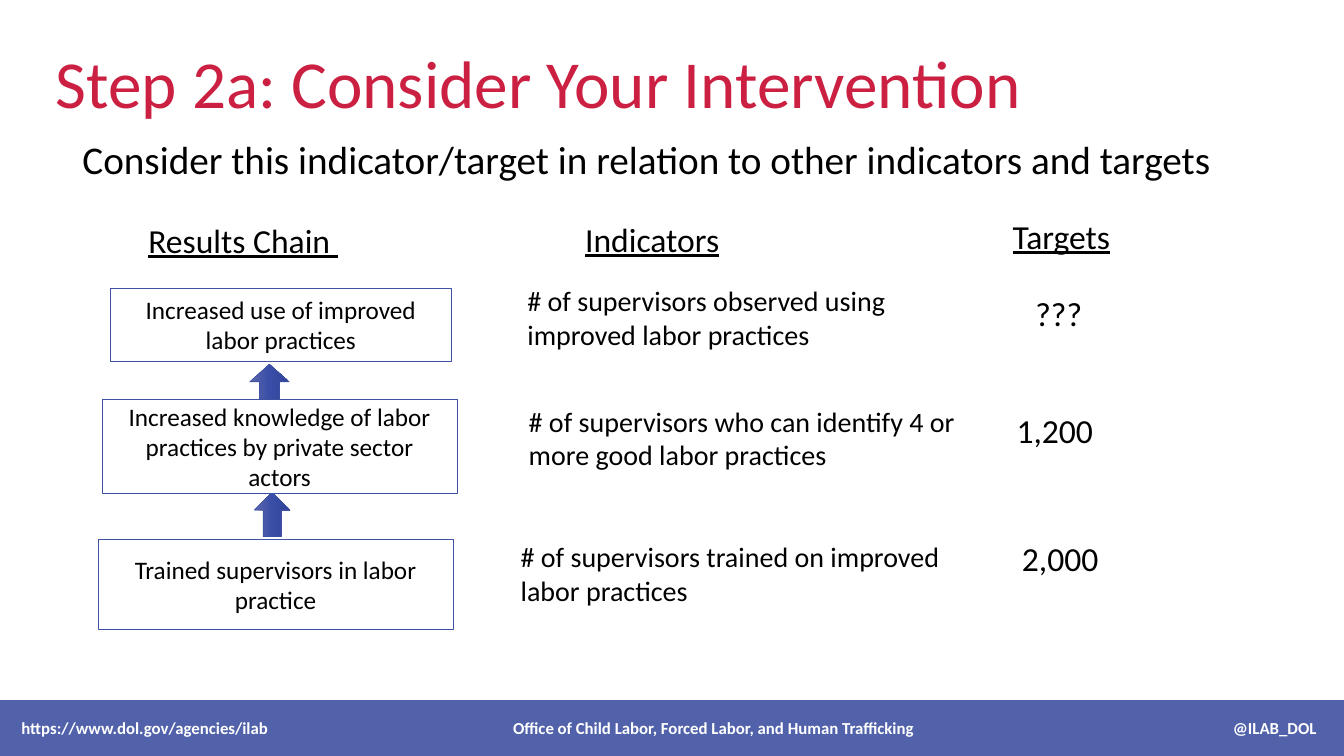
from dataclasses import dataclass

from lxml import etree
from pptx import Presentation
from pptx.dml.color import RGBColor
from pptx.enum.shapes import MSO_SHAPE
from pptx.enum.text import MSO_ANCHOR, PP_ALIGN
from pptx.oxml.ns import qn
from pptx.util import Inches, Pt

RECT, ARROW = MSO_SHAPE.RECTANGLE, MSO_SHAPE.RIGHT_ARROW
LEFT, MID, RIGHT = PP_ALIGN.LEFT, PP_ALIGN.CENTER, PP_ALIGN.RIGHT
TOP, CENTER, BOTTOM = MSO_ANCHOR.TOP, MSO_ANCHOR.MIDDLE, MSO_ANCHOR.BOTTOM
FONT = "Calibri"
BLACK, WHITE, RED, BLUE = "000000", "FFFFFF", "CB2042", "3F51A2"
SHADES = ((0, "5D68AE"), (50, "3A4EA7"), (100, "2F4299"))
COLS = ROWS = 100

deck = Presentation()
deck.slide_width, deck.slide_height = Inches(13.33), Inches(7.5)
slide = deck.slides.add_slide(deck.slide_layouts[6])


@dataclass(frozen=True)
class Area:
    col: float
    row: float
    wide: float
    high: float

    def place(self) -> tuple[int, int, int, int]:
        across, down = deck.slide_width / COLS, deck.slide_height / ROWS
        return (int(self.col * across), int(self.row * down),
                int(self.wide * across), int(self.high * down))


@dataclass(frozen=True)
class Label:
    text: str
    area: Area
    size: int
    color: str = BLACK
    align: PP_ALIGN = LEFT
    anchor: MSO_ANCHOR = TOP
    under: bool = False
    bold: bool = False
    wrap: bool = True
    lead: float = 1.0
    before: int = 0


def tint(code: str) -> RGBColor:
    return RGBColor.from_string(code)


def write(frame, label: Label) -> None:
    frame.word_wrap = label.wrap
    frame.vertical_anchor = label.anchor
    para = frame.paragraphs[0]
    para.alignment = label.align
    para.line_spacing = label.lead
    para.space_before = Pt(label.before)
    run = para.add_run()
    run.text = label.text
    font = run.font
    font.name, font.size = FONT, Pt(label.size)
    font.bold, font.underline = label.bold, label.under
    font.color.rgb = tint(label.color)


def draw_label(label: Label) -> None:
    write(slide.shapes.add_textbox(*label.area.place()).text_frame, label)


def draw_shape(kind: MSO_SHAPE, area: Area, fill: str, line: str = ""):
    shape = slide.shapes.add_shape(kind, *area.place())
    shape.shadow.inherit = False
    shape.fill.solid()
    shape.fill.fore_color.rgb = tint(fill)
    if line:
        shape.line.color.rgb = tint(line)
        shape.line.width = Pt(0.5)
    else:
        shape.line.fill.background()
    return shape


def draw_box(label: Label) -> None:
    write(draw_shape(RECT, label.area, WHITE, BLUE).text_frame, label)


def draw_arrow(area: Area) -> None:
    arrow = draw_shape(ARROW, area, BLUE, BLUE)
    arrow.rotation = 270
    arrow.fill.gradient()
    arrow.fill.gradient_angle = 270
    stops = next(arrow._element.iter(qn("a:gsLst")))
    stops[:] = []
    for share, code in SHADES:
        stop = etree.SubElement(stops, qn("a:gs"), pos=str(share * 1000))
        etree.SubElement(stop, qn("a:srgbClr"), val=code)


def draw_foot() -> None:
    bar = draw_shape(RECT, Area(0, 92.6, 100.3, 7.4), BLUE)
    color = next(bar._element.iter(qn("a:srgbClr")))
    etree.SubElement(color, qn("a:alpha"), val="90000")
    parts = (
        ("https://www.dol.gov/agencies/ilab", 0.85, 30, LEFT),
        ("Office of Child Labor, Forced Labor, and Human Trafficking", 33.1, 40, MID),
        ("@ILAB_DOL", 78.7, 20, RIGHT),
    )
    for text, col, wide, align in parts:
        draw_label(Label(text, Area(col, 92.6, wide, 7.4), 12, WHITE,
                         align, CENTER, bold=True))


HEADS = (
    ("Results Chain ", Area(10.3, 28.4, 15.8, 6.7)),
    ("Indicators", Area(42.8, 28.3, 11.6, 6.7)),
    ("Targets", Area(74.6, 27.9, 8.9, 6.7)),
)
CHAIN = (
    ("Trained supervisors in labor practice", Area(7.3, 71.3, 26.4, 12),
     Area(18.6, 65.7, 3.3, 4.7)),
    ("Increased knowledge of labor practices by private sector actors",
     Area(7.6, 52.8, 26.4, 12.5), Area(18.75, 47.9, 2.6, 5.2)),
    ("Increased use of improved labor practices", Area(8.2, 38.1, 25.4, 9.7), None),
)
SIGNS = (
    ("# of supervisors trained on improved labor practices", Area(38, 70.7, 35, 10.3)),
    ("# of supervisors who can identify 4 or more good labor practices",
     Area(38.6, 52.8, 34.5, 10.3)),
    ("# of supervisors observed using improved labor practices",
     Area(38.5, 36.9, 31.4, 10.3)),
)
GOALS = (
    ("2,000", Area(75.3, 70.5, 13.8, 6.7)),
    ("1,200", Area(74.9, 53.5, 14, 6.7)),
    ("???", Area(76.3, 38.1, 7.3, 6.7)),
)


def main() -> None:
    draw_label(Label("Step 2a: Consider Your Intervention", Area(3.4, 2.1, 87.4, 14.9),
                     48, RED, anchor=BOTTOM, lead=0.9))
    draw_label(Label("Consider this indicator/target in relation to other indicators and targets",
                     Area(5.4, 17.9, 90.3, 8.5), 28, lead=0.9, before=10))
    for text, area in HEADS:
        draw_label(Label(text, area, 24, under=True, wrap=False))
    for text, area, arrow in CHAIN:
        draw_box(Label(text, area, 18, align=MID, anchor=CENTER))
        if arrow:
            draw_arrow(arrow)
    for size, items in ((20, SIGNS), (24, GOALS)):
        for text, area in items:
            draw_label(Label(text, area, size))
    draw_foot()
    deck.save("out.pptx")


if __name__ == "__main__":
    main()
